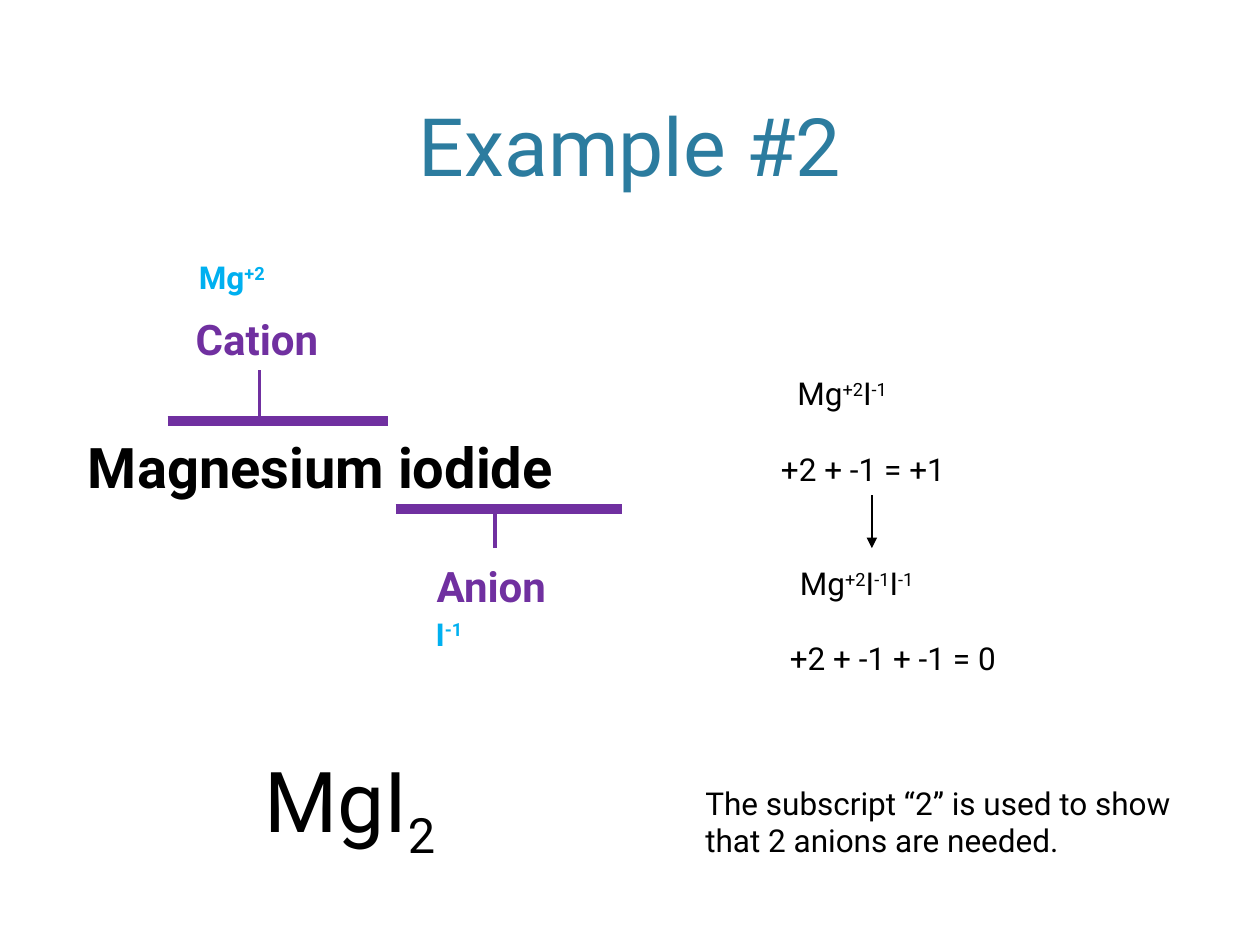
from lxml.etree import SubElement
from pptx import Presentation
from pptx.dml.color import RGBColor
from pptx.enum.shapes import MSO_CONNECTOR
from pptx.enum.text import MSO_ANCHOR, MSO_AUTO_SIZE, PP_ALIGN
from pptx.oxml.ns import qn
from pptx.util import Inches, Pt

COLORS = {
    "title": "2C7C9F",
    "label": "7030A0",
    "ion": "00B0F0",
    "text": "000000",
}
FONT = "Roboto"
SUPERSCRIPT = 30000
SUBSCRIPT = -25000
MAGNESIUM = [("Mg", 0), ("+2", SUPERSCRIPT)]
IODIDE = [("I", 0), ("-1", SUPERSCRIPT)]


def add_text(slide, box, runs, size, color="text", bold=False, wrap=False,
             align=PP_ALIGN.LEFT, anchor=MSO_ANCHOR.TOP, grow=True):
    shape = slide.shapes.add_textbox(*map(Inches, box))
    frame = shape.text_frame
    frame.word_wrap = wrap
    frame.auto_size = MSO_AUTO_SIZE.SHAPE_TO_FIT_TEXT if grow else MSO_AUTO_SIZE.NONE
    frame.vertical_anchor = anchor
    paragraph = frame.paragraphs[0]
    paragraph.alignment = align
    for text, baseline in runs:
        run = paragraph.add_run()
        run.text = text
        run.font.name = FONT
        run.font.size = Pt(size)
        run.font.bold = bold
        run.font.color.rgb = RGBColor.from_string(COLORS[color])
        if baseline:
            run.font._element.set("baseline", str(baseline))


def add_line(slide, start, end, color, width, arrow=False):
    points = map(Inches, (*start, *end))
    connector = slide.shapes.add_connector(MSO_CONNECTOR.STRAIGHT, *points)
    connector.line.color.rgb = RGBColor.from_string(COLORS[color])
    connector.line.width = Pt(width)
    if arrow:
        SubElement(connector.line._get_or_add_ln(), qn("a:tailEnd"), type="triangle")
    SubElement(connector._element.spPr, qn("a:effectLst"))


def add_title(slide, box):
    add_text(slide, box, [("Example #2", 0)], 46, "title", wrap=True,
             align=PP_ALIGN.CENTER, anchor=MSO_ANCHOR.BOTTOM, grow=False)


def add_ion(slide, box, name, symbol, name_box, symbol_offset, bar, stem):
    left, top = box[:2]
    bar_start, bar_end, bar_y = bar
    stem_x, stem_start, stem_end = stem
    add_line(slide, (left + bar_start, top + bar_y),
             (left + bar_end, top + bar_y), "label", 6)
    add_line(slide, (left + stem_x, top + stem_start),
             (left + stem_x, top + stem_end), "label", 2)
    name_left, name_top, name_width = name_box
    add_text(slide, (left + name_left, top + name_top, name_width, 0.5),
             [(name, 0)], 24, "label", bold=True, align=PP_ALIGN.CENTER)
    symbol_left, symbol_top = symbol_offset
    add_text(slide, (left + symbol_left, top + symbol_top, 2.05, 0.4),
             symbol, 18, "ion", bold=True, wrap=True)


def add_compound(slide, box):
    left, top, width, height = box
    add_text(slide, (left, top + 1.38, width, 0.64),
             [("Magnesium iodide", 0)], 32, bold=True, wrap=True)
    add_ion(slide, box, "Cation", MAGNESIUM, (0.82, 0.44, 1.24), (0.88, 0),
            bar=(0.73, 2.48, 1.34), stem=(1.46, 1.3, 0.94))
    add_ion(slide, box, "Anion", IODIDE, (2.73, 2.4, 1.14), (2.76, 2.83),
            bar=(2.54, 4.34, 2.04), stem=(3.33, 2.35, 2.01))


def add_charge_balance(slide, box):
    left, top = box[:2]
    steps = [
        (0, 0.6, 1.56, [("+2 + -1 = +1", 0)]),
        (0.13, 0, 1.03, MAGNESIUM + IODIDE),
        (0.15, 1.51, 1.27, MAGNESIUM + IODIDE * 2),
        (0.07, 2.1, 1.92, [("+2 + -1 + -1 = 0", 0)]),
    ]
    for x, y, width, runs in steps:
        add_text(slide, (left + x, top + y, width, 0.4), runs, 18)
    add_line(slide, (left + 0.82, top + 1.01), (left + 0.82, top + 1.43),
             "text", 1, arrow=True)


def add_formula(slide, box):
    add_text(slide, box, [("MgI", 0), ("2", SUBSCRIPT)], 48)


def add_explanation(slide, box):
    sentence = "The subscript “2” is used to show that 2 anions are needed."
    add_text(slide, box, [(sentence, 0)], 18, wrap=True)


def main():
    presentation = Presentation()
    presentation.slide_width = Inches(10)
    presentation.slide_height = Inches(7.5)
    slide = presentation.slides.add_slide(presentation.slide_layouts[6])
    add_title(slide, (0.6, 0.12, 8.8, 1.46))
    add_compound(slide, (0.6, 2, 5.26, 3.23))
    add_charge_balance(slide, (6.1, 2.92, 2, 2.5))
    add_formula(slide, (2, 5.89, 1.68, 0.91))
    add_explanation(slide, (5.5, 6.17, 4.1, 0.7))
    presentation.save("out.pptx")


if __name__ == "__main__":
    main()
